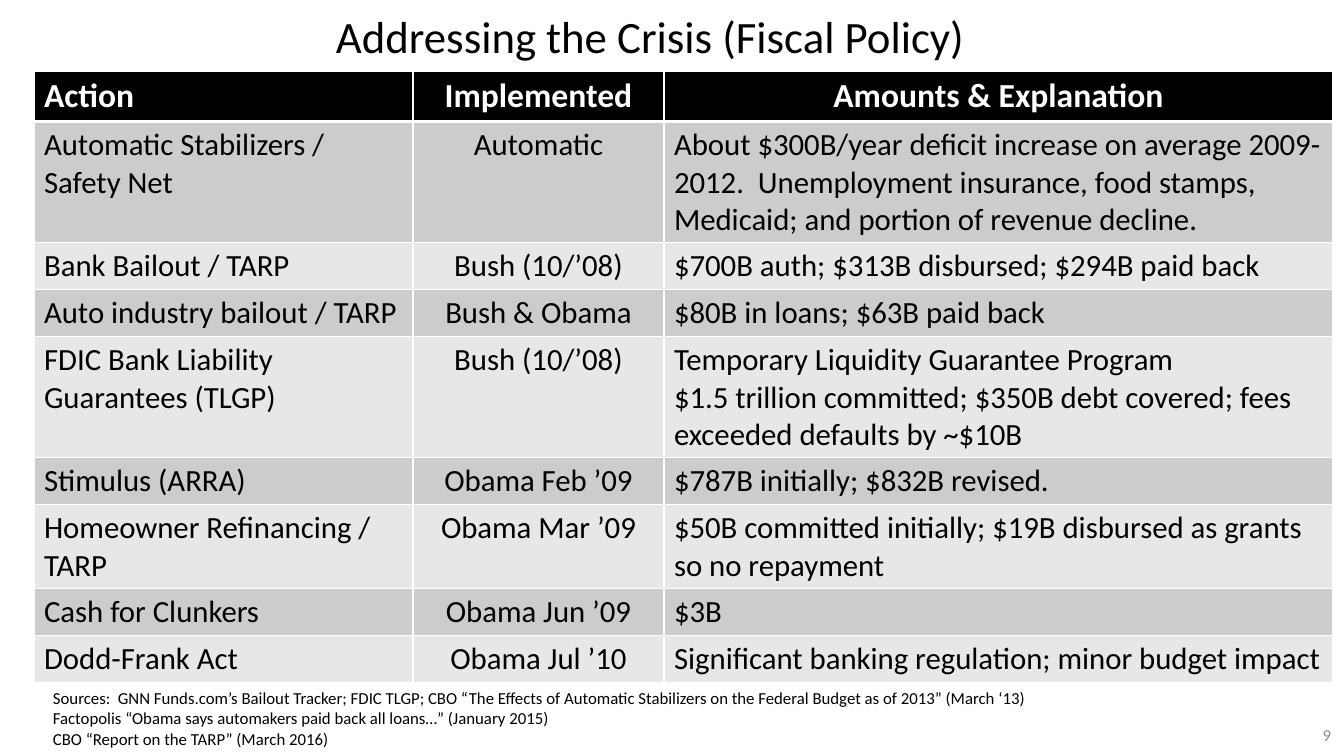
from lxml import etree
from pptx import Presentation
from pptx.dml.color import RGBColor
from pptx.enum.text import MSO_ANCHOR, MSO_AUTO_SIZE, PP_ALIGN
from pptx.oxml.ns import qn
from pptx.util import Emu, Pt

LEFT, CENTER, RIGHT = PP_ALIGN.LEFT, PP_ALIGN.CENTER, PP_ALIGN.RIGHT
TOP, MIDDLE = MSO_ANCHOR.TOP, MSO_ANCHOR.MIDDLE
FIT_SHAPE = MSO_AUTO_SIZE.SHAPE_TO_FIT_TEXT

BLACK = RGBColor(0x00, 0x00, 0x00)
WHITE = RGBColor(0xFF, 0xFF, 0xFF)
GRAY = RGBColor(0x8C, 0x8C, 0x8C)
BANDS = (RGBColor(0xE7, 0xE7, 0xE7), RGBColor(0xCC, 0xCC, 0xCC))

FONT = "Calibri"
EMU_PER_PX = 914400 / 100.8

COLUMN_WIDTHS = (379, 251, 669)
COLUMN_ALIGNS = (LEFT, CENTER, LEFT)
ROW_HEIGHT = 41
TABLE_HEIGHT = 612  # rows grow to fit their text

HEADINGS = ("Action", "Implemented", "Amounts & Explanation")
ACTIONS = (
    ("Automatic Stabilizers / Safety Net", "Automatic",
     "About $300B/year deficit increase on average 2009-2012.  Unemployment "
     "insurance, food stamps, Medicaid; and portion of revenue decline."),
    ("Bank Bailout / TARP", "Bush (10/’08)",
     "$700B auth; $313B disbursed; $294B paid back"),
    ("Auto industry bailout / TARP", "Bush & Obama",
     "$80B in loans; $63B paid back"),
    ("FDIC Bank Liability Guarantees (TLGP)", "Bush (10/’08)",
     "Temporary Liquidity Guarantee Program\n"
     "$1.5 trillion committed; $350B debt covered; fees exceeded defaults by ~$10B"),
    ("Stimulus (ARRA)", "Obama Feb ’09", "$787B initially; $832B revised."),
    ("Homeowner Refinancing / TARP", "Obama Mar ’09",
     "$50B committed initially; $19B disbursed as grants so no repayment"),
    ("Cash for Clunkers", "Obama Jun ’09", "$3B"),
    ("Dodd-Frank Act", "Obama Jul ’10",
     "Significant banking regulation; minor budget impact"),
)
SOURCES = (
    "Sources:  GNN Funds.com’s Bailout Tracker; FDIC TLGP; CBO “The Effects of "
    "Automatic Stabilizers on the Federal Budget as of 2013” (March ‘13)\n"
    "Factopolis “Obama says automakers paid back all loans…” (January 2015)\n"
    "CBO “Report on the TARP” (March 2016)"
)


def px(length):
    return Emu(round(length * EMU_PER_PX))


def write(frame, text, size, color, align=LEFT, bold=False):
    """Fill a text frame, one paragraph per line of text."""
    for number, line in enumerate(text.split("\n")):
        paragraph = frame.add_paragraph() if number else frame.paragraphs[0]
        paragraph.alignment = align
        run = paragraph.add_run()
        run.text = line
        run.font.name = FONT
        run.font.size = Pt(size)
        run.font.bold = bold
        run.font.color.rgb = color


def add_label(slide, box, text, size, color, align=LEFT, anchor=TOP, wrap=False):
    frame = slide.shapes.add_textbox(*map(px, box)).text_frame
    frame.word_wrap = wrap
    frame.vertical_anchor = anchor
    if not wrap:
        frame.auto_size = FIT_SHAPE
    write(frame, text, size, color, align)


def set_borders(cell, top, bottom):
    """Draw white cell borders; widths are in points."""
    properties = cell._tc.get_or_add_tcPr()
    for side, width in (("L", 1), ("R", 1), ("T", top), ("B", bottom)):
        line = etree.SubElement(properties, qn(f"a:ln{side}"), w=str(Pt(width)))
        fill = etree.SubElement(line, qn("a:solidFill"))
        etree.SubElement(fill, qn("a:srgbClr"), val=str(WHITE))


def add_actions_table(slide, left, top):
    rows = (HEADINGS, *ACTIONS)
    holder = slide.shapes.add_table(
        len(rows), len(HEADINGS), px(left), px(top),
        px(sum(COLUMN_WIDTHS)), px(TABLE_HEIGHT))
    table = holder.table
    for column, width in zip(table.columns, COLUMN_WIDTHS):
        column.width = px(width)
    for row in table.rows:
        row.height = px(ROW_HEIGHT)
    holder.height = px(TABLE_HEIGHT)

    for r, texts in enumerate(rows):
        heading = r == 0
        for c, text in enumerate(texts):
            cell = table.cell(r, c)
            set_borders(cell, top=3 if r == 1 else 1, bottom=3 if heading else 1)
            cell.fill.solid()
            cell.fill.fore_color.rgb = BLACK if heading else BANDS[r % 2]
            write(cell.text_frame, text, 24 if heading else 22,
                  WHITE if heading else BLACK,
                  CENTER if heading and c else COLUMN_ALIGNS[c], heading)


def main():
    deck = Presentation()
    deck.slide_width, deck.slide_height = px(1344), px(756)
    slide = deck.slides.add_slide(deck.slide_layouts[6])

    # Slide number
    add_label(slide, (1039, 715, 302, 40), "9", 12, GRAY, RIGHT, MIDDLE, wrap=True)
    # Title
    add_label(slide, (326, 4, 655, 64), "Addressing the Crisis (Fiscal Policy)", 32, BLACK)
    # Sources below the table
    add_label(slide, (43, 683, 1010, 72), SOURCES, 12, BLACK)
    # Policy actions
    add_actions_table(slide, 34, 71)

    deck.save("out.pptx")


if __name__ == "__main__":
    main()
